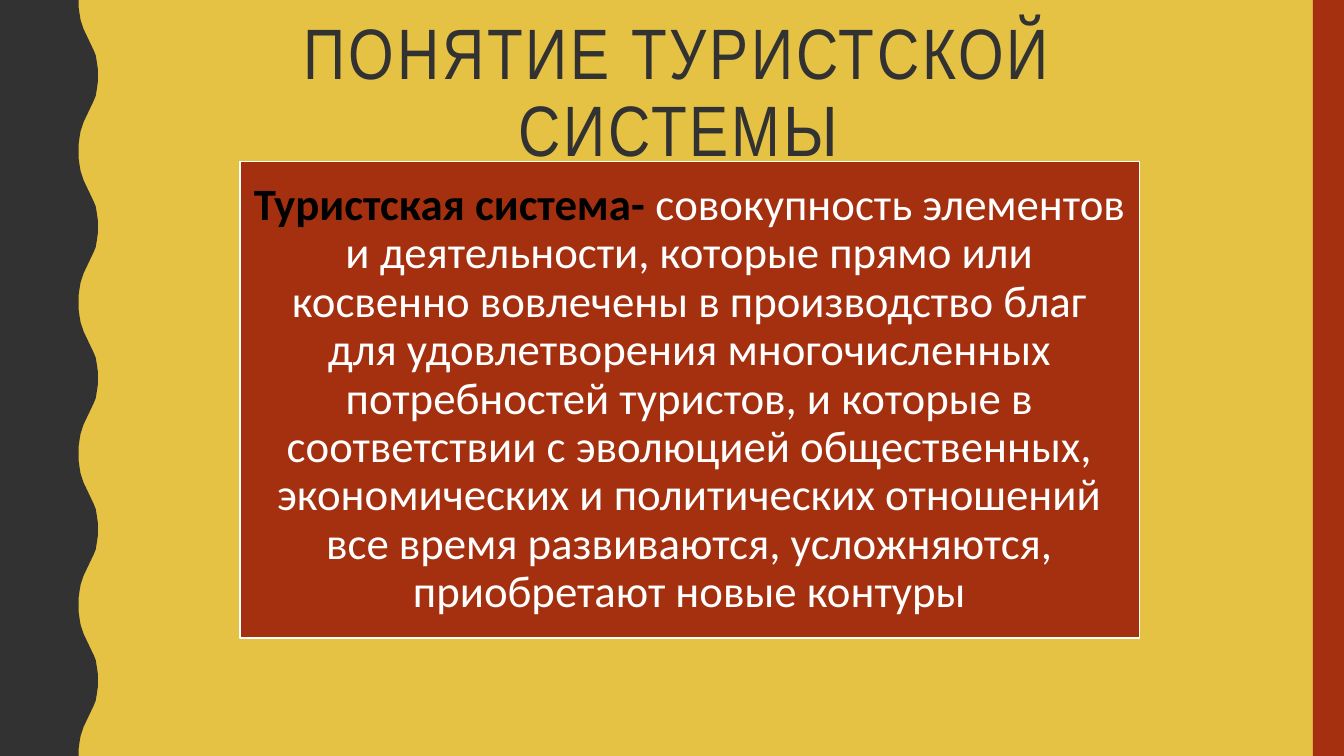
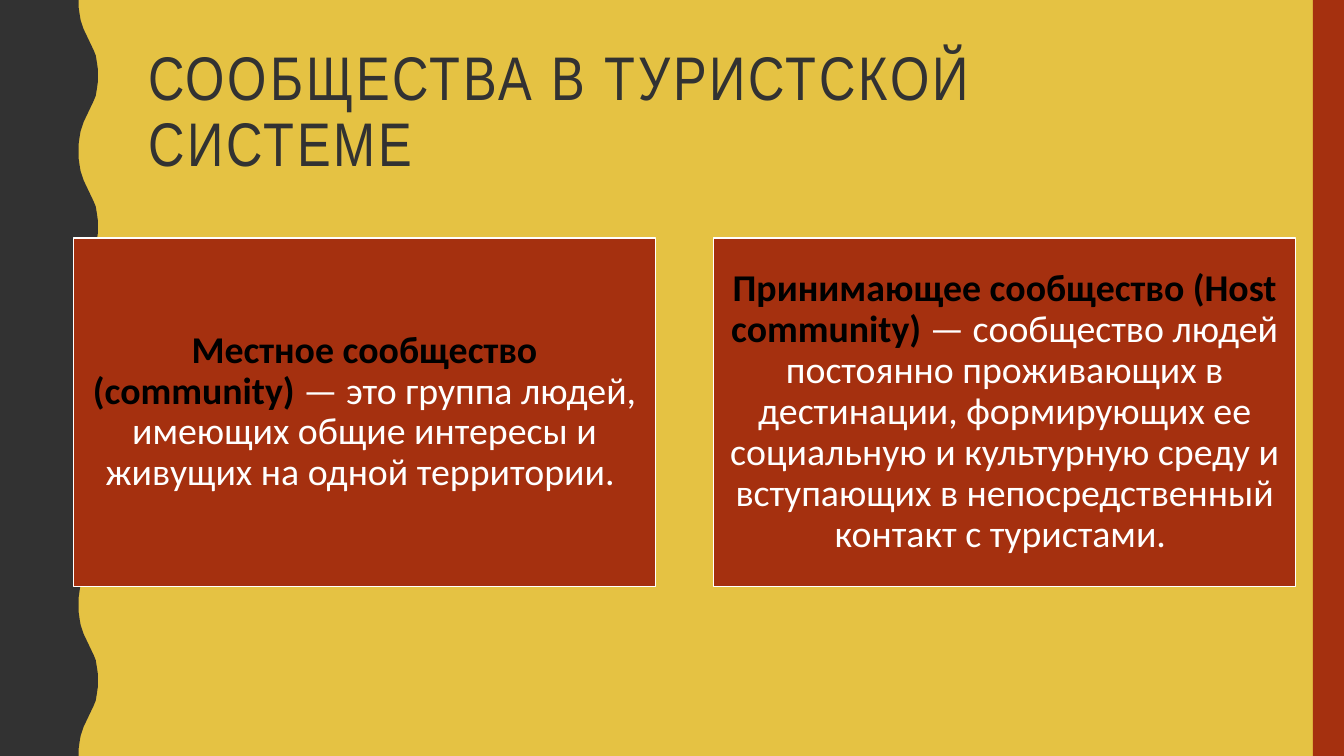
from dataclasses import dataclass

from pptx import Presentation
from pptx.dml.color import RGBColor
from pptx.enum.shapes import MSO_SHAPE
from pptx.enum.text import MSO_ANCHOR, PP_ALIGN
from pptx.util import Inches, Pt


@dataclass(frozen=True)
class Theme:
    background: RGBColor = RGBColor.from_string("E5C243")
    dark: RGBColor = RGBColor.from_string("323232")
    accent: RGBColor = RGBColor.from_string("A5300F")
    white: RGBColor = RGBColor.from_string("FFFFFF")
    black: RGBColor = RGBColor.from_string("000000")
    title_font: str = "Arial Narrow"
    body_font: str = "Calibri"
    title_spacing: int = 200
    line_spacing: float = 0.9
    large_title: int = 51
    normal_title: int = 44
    large_body: int = 32
    normal_body: int = 27


THEME = Theme()
WIDTH, HEIGHT = 13.33, 7.5
NO_BREAK_SPACE = chr(160)
WAVE_COUNT, WAVE_LENGTH = 5, 1.5
HALF_WAVE = [
    (0.78, 0), (0.78, 0.07), (0.79, 0.14), (0.8, 0.2), (0.83, 0.29),
    (0.93, 0.5), (0.95, 0.55), (0.96, 0.61), (0.97, 0.68), (0.97, 0.75),
]


def style_shape(shape, fill, line=None):
    shape.shadow.inherit = False
    shape.fill.solid()
    shape.fill.fore_color.rgb = fill
    if line is None:
        shape.line.fill.background()
    else:
        shape.line.color.rgb = line
        shape.line.width = Pt(1)


def add_rectangle(slide, left, top, width, height, line=None):
    shape = slide.shapes.add_shape(
        MSO_SHAPE.RECTANGLE, Inches(left), Inches(top), Inches(width), Inches(height)
    )
    style_shape(shape, THEME.accent, line)
    return shape


def add_wave(slide):
    falling = [(x, WAVE_LENGTH - y) for x, y in reversed(HALF_WAVE[:-1])]
    edge = [
        (x, y + wave * WAVE_LENGTH)
        for wave in range(WAVE_COUNT)
        for x, y in HALF_WAVE + falling
    ]
    builder = slide.shapes.build_freeform(0, 0)
    builder.add_line_segments(
        [(Inches(x), Inches(y)) for x, y in edge + [(0, HEIGHT)]], close=True
    )
    style_shape(builder.convert_to_shape(), THEME.dark)


def add_base_slide(presentation):
    slide = presentation.slides.add_slide(presentation.slide_layouts[6])
    slide.background.fill.solid()
    slide.background.fill.fore_color.rgb = THEME.background
    add_wave(slide)
    add_rectangle(slide, 13.02, 0, 0.31, HEIGHT)
    return slide


def add_run(paragraph, text, font, size, color, bold=False):
    run = paragraph.add_run()
    run.text = text
    run.font.name = font
    run.font.size = Pt(size)
    run.font.color.rgb = color
    run.font.bold = bold
    return run


def add_title(slide, text, left, top, width, height, size, alignment):
    shape = slide.shapes.add_textbox(
        Inches(left), Inches(top), Inches(width), Inches(height)
    )
    shape.text_frame.word_wrap = True
    paragraph = shape.text_frame.paragraphs[0]
    paragraph.alignment = alignment
    paragraph.line_spacing = THEME.line_spacing
    run = add_run(paragraph, text, THEME.title_font, size, THEME.dark)
    run.font._element.set("spc", str(THEME.title_spacing))


def add_definition(slide, term, meaning, left, top, width, height, size, inset):
    shape = add_rectangle(slide, left, top, width, height, THEME.white)
    frame = shape.text_frame
    frame.word_wrap = True
    frame.vertical_anchor = MSO_ANCHOR.MIDDLE
    frame.margin_left = frame.margin_right = Inches(inset)
    frame.margin_top = frame.margin_bottom = Inches(inset)
    paragraph = frame.paragraphs[0]
    paragraph.alignment = PP_ALIGN.CENTER
    paragraph.line_spacing = THEME.line_spacing
    add_run(paragraph, term, THEME.body_font, size, THEME.black, True)
    add_run(paragraph, meaning, THEME.body_font, size, THEME.white)


def add_concept_slide(presentation):
    slide = add_base_slide(presentation)
    add_title(
        slide, "ПОНЯТИЕ ТУРИСТСКОЙ СИСТЕМЫ",
        1.48, 0.13, 10.5, 1.15, THEME.large_title, PP_ALIGN.CENTER,
    )
    add_definition(
        slide,
        "Туристская система- ",
        "совокупность элементов и деятельности, которые прямо или косвенно "
        "вовлечены в производство благ для удовлетворения многочисленных "
        "потребностей туристов, и которые в соответствии с эволюцией "
        "общественных, экономических и политических отношений все время "
        "развиваются, усложняются, приобретают новые контуры",
        2.38, 1.6, 8.92, 4.73, THEME.large_body, 0.13,
    )


def add_communities_slide(presentation):
    slide = add_base_slide(presentation)
    add_title(
        slide, "СООБЩЕСТВА В ТУРИСТСКОЙ СИСТЕМЕ",
        1.37, 0.42, 11.13, 1.63, THEME.normal_title, PP_ALIGN.LEFT,
    )
    communities = [
        (
            "Местное сообщество (community)",
            "— это группа людей, имеющих общие интересы и живущих на одной "
            "территории. ",
        ),
        (
            "Принимающее сообщество (Host community)",
            "— сообщество людей постоянно проживающих в дестинации, "
            "формирующих ее социальную и культурную среду и вступающих в "
            "непосредственный контакт с туристами. ",
        ),
    ]
    width, gap = 5.77, 0.58
    for index, (term, meaning) in enumerate(communities):
        left = 0.73 + index * (width + gap)
        add_definition(
            slide, term, NO_BREAK_SPACE + meaning,
            left, 2.36, width, 3.46, THEME.normal_body, 0.11,
        )


def main():
    presentation = Presentation()
    presentation.slide_width = Inches(WIDTH)
    presentation.slide_height = Inches(HEIGHT)
    add_concept_slide(presentation)
    add_communities_slide(presentation)
    presentation.save("out.pptx")


if __name__ == "__main__":
    main()
